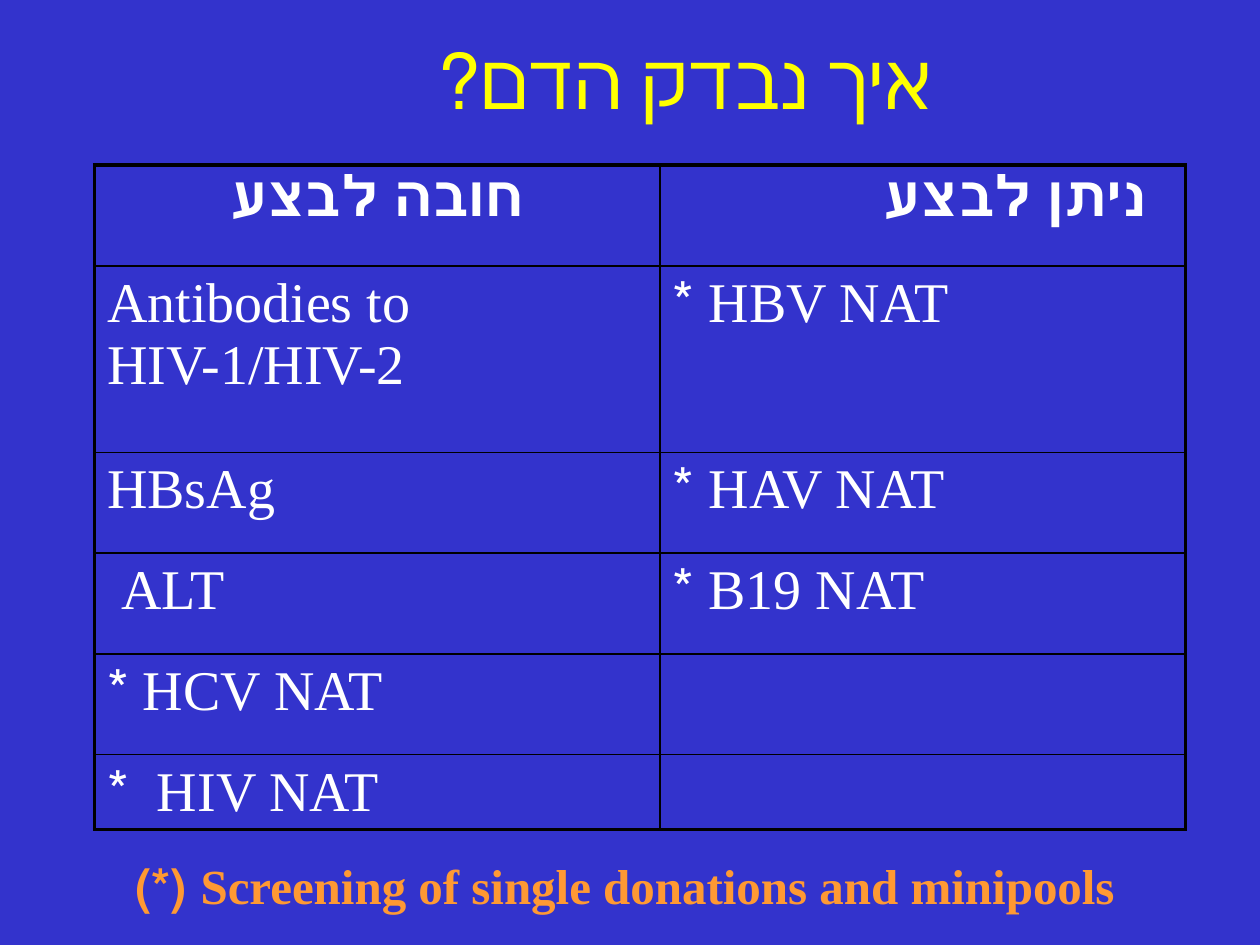
from lxml.etree import SubElement
from pptx import Presentation
from pptx.dml.color import RGBColor
from pptx.enum.text import MSO_ANCHOR, MSO_AUTO_SIZE, PP_ALIGN
from pptx.oxml import parse_xml
from pptx.oxml.ns import nsdecls, qn
from pptx.util import Inches, Pt

COLORS = {"background": "3333CC", "title": "FFFF00", "note": "FF9933", "cell": "FFFFFF", "border": "000000"}
FONT = "Times New Roman"
TITLE = "איך נבדק הדם?"
NOTE = "Screening of single donations and minipools (*)"
ROWS = [
    ("חובה לבצע", "ניתן לבצע"),
    ("Antibodies to HIV-1/HIV-2", "HBV NAT *"),
    ("HBsAg", "HAV NAT *"),
    ("ALT ", "B19 NAT *"),
    ("HCV NAT *", ""),
    ("HIV NAT  *", ""),
]
HEADER_ALIGNMENTS = (PP_ALIGN.CENTER, PP_ALIGN.RIGHT)
COLUMN_WIDTHS = (4.49, 4.17)
ROW_HEIGHTS = (0.8, 1.48, 0.8, 0.8, 0.8, 0.59)
TITLE_BOX = (1.38, 0.26, 8.12, 0.73)
NOTE_BOX = (0.67, 6.74, 8.58, 0.53)
TABLE_ORIGIN = (0.75, 1.31)
OUTER, INNER = 2.25, 1


def write(frame, text, color, size, alignment, bold=False, margin=0, indent=0, before=0):
    """Write one right-to-left paragraph into a text frame."""
    paragraph = frame.paragraphs[0]
    paragraph.alignment = alignment
    properties = paragraph._p.get_or_add_pPr()
    for name, value in {"marL": Inches(margin), "indent": Inches(indent), "rtl": 1}.items():
        properties.set(name, str(int(value)))
    spacing = SubElement(properties, qn("a:spcBef"))
    SubElement(spacing, qn("a:spcPct")).set("val", str(before * 1000))
    SubElement(properties, qn("a:buNone"))
    run = paragraph.add_run()
    run.text = text
    for name, value in {"name": FONT, "size": Pt(size), "bold": bold}.items():
        setattr(run.font, name, value)
    run.font.color.rgb = RGBColor.from_string(COLORS[color])


def place(shape, box, anchor):
    """Move a placeholder and fix its text settings."""
    for name, value in zip(("left", "top", "width", "height"), box):
        setattr(shape, name, Inches(value))
    settings = {"word_wrap": True, "auto_size": MSO_AUTO_SIZE.NONE, "vertical_anchor": anchor}
    for name, value in settings.items():
        setattr(shape.text_frame, name, value)


def draw_borders(cell, widths):
    """Give a cell its left, right, top and bottom lines."""
    properties = cell._tc.get_or_add_tcPr()
    for position, (side, width) in enumerate(zip("LRTB", widths)):
        line = parse_xml(
            f'<a:ln{side} {nsdecls("a")} w="{Pt(width)}"><a:solidFill>'
            f'<a:srgbClr val="{COLORS["border"]}"/></a:solidFill></a:ln{side}>'
        )
        properties.insert(position, line)


def add_test_table(slide):
    """Add the table of required and optional blood tests."""
    last_row, last_column = len(ROWS) - 1, len(COLUMN_WIDTHS) - 1
    size = (sum(COLUMN_WIDTHS), sum(ROW_HEIGHTS))
    table = slide.shapes.add_table(
        len(ROWS), len(COLUMN_WIDTHS), *map(Inches, TABLE_ORIGIN + size)
    ).table
    table.first_row = table.horz_banding = False
    for column, width in zip(table.columns, COLUMN_WIDTHS):
        column.width = Inches(width)
    for row, height in zip(table.rows, ROW_HEIGHTS):
        row.height = Inches(height)
    for r, texts in enumerate(ROWS):
        for c, text in enumerate(texts):
            cell = table.cell(r, c)
            cell.fill.background()
            edges = (c == 0, c == last_column, r == 0, r == last_row)
            draw_borders(cell, [OUTER if edge else INNER for edge in edges])
            if text:
                alignment = HEADER_ALIGNMENTS[c] if r == 0 else PP_ALIGN.LEFT
                margin = 0 if (r, c) == (0, 0) else 0.21
                write(cell.text_frame, text, "cell", 32, alignment, r == 0, margin, before=20)


def main():
    """Build the blood testing slide."""
    presentation = Presentation()
    presentation.slide_width, presentation.slide_height = Inches(10), Inches(7.5)
    slide = presentation.slides.add_slide(presentation.slide_layouts[1])
    fill = slide.background.fill
    fill.solid()
    fill.fore_color.rgb = RGBColor.from_string(COLORS["background"])
    title, note = slide.placeholders
    place(title, TITLE_BOX, MSO_ANCHOR.MIDDLE)
    write(title.text_frame, TITLE, "title", 44, PP_ALIGN.CENTER)
    place(note, NOTE_BOX, MSO_ANCHOR.TOP)
    write(note.text_frame, NOTE, "note", 28, PP_ALIGN.CENTER, True, 0.38, -0.38, 20)
    add_test_table(slide)
    presentation.save("out.pptx")


if __name__ == "__main__":
    main()
